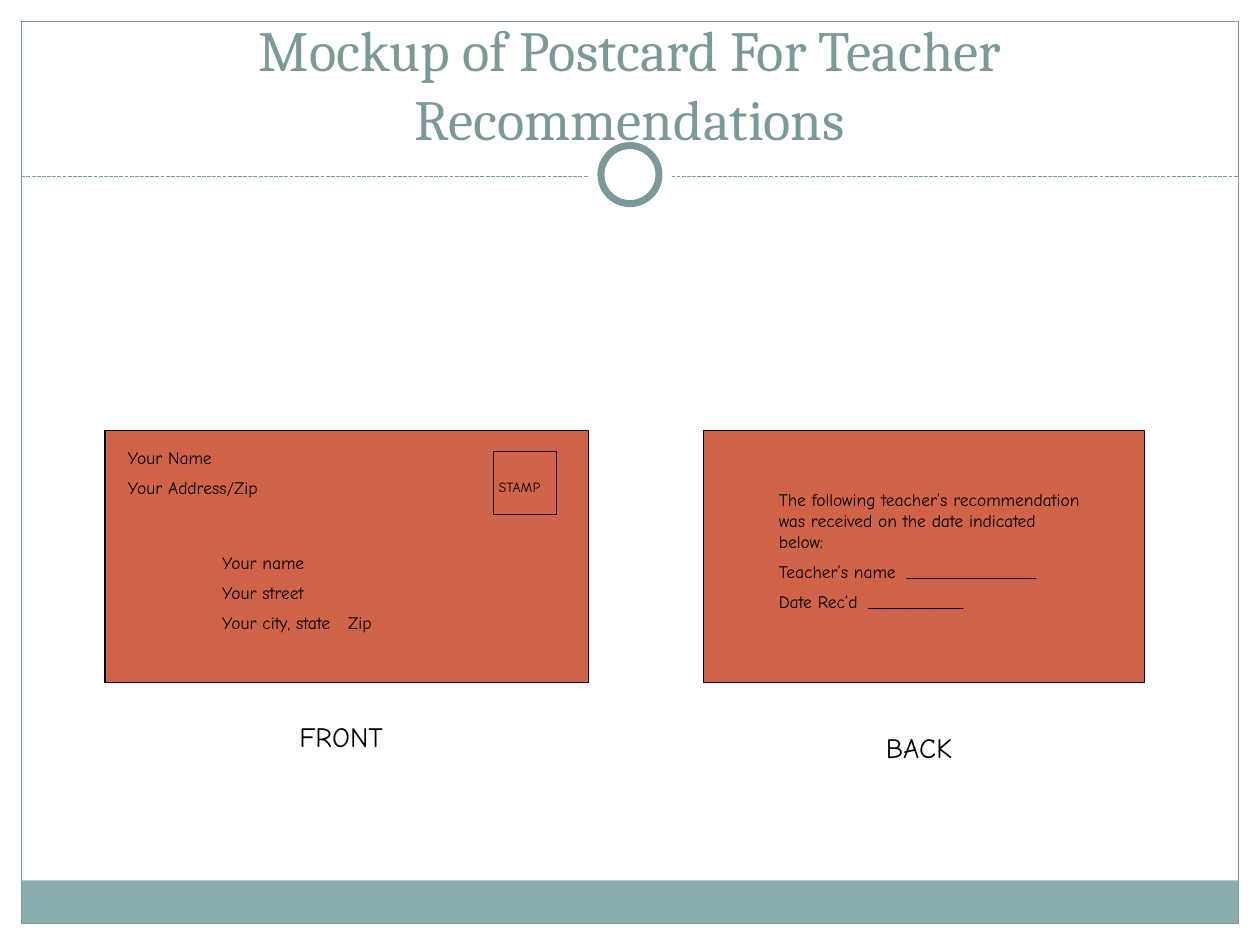
from lxml.etree import SubElement
from pptx import Presentation
from pptx.dml.color import RGBColor
from pptx.enum.dml import MSO_LINE_DASH_STYLE as Dash
from pptx.enum.shapes import MSO_CONNECTOR as Connector, MSO_SHAPE as Shape
from pptx.enum.text import MSO_ANCHOR as Anchor, MSO_AUTO_SIZE as AutoSize, PP_ALIGN as Align
from pptx.oxml.ns import qn
from pptx.util import Cm, Pt


class Theme:
    teal = RGBColor(0x7C, 0x99, 0x9A)
    band = RGBColor(0x8C, 0xAD, 0xAE)
    card = RGBColor(0xD1, 0x63, 0x49)
    white = RGBColor(0xFF, 0xFF, 0xFF)
    ink = RGBColor(0, 0, 0)
    title_font, body_font = "Cambria", "Comic Neue"
    title, caption, body, stamp = 32.4, 16, 10, 8
    hairline, ring = 0.75, 4


# Content: boxes are (left, top, width, height) in cm
TITLE = "Mockup of Postcard For Teacher Recommendations"
WIDTH, HEIGHT, MARGIN = 25.4, 19.05, 0.43
RULE_Y, BAND_TOP = 3.56, 17.75

CARDS = [
    (2.12, 8.68, 9.74, 5.08),   # front
    (9.95, 9.1, 1.27, 1.27),    # stamp
    (14.18, 8.68, 8.89, 5.08),  # back
]

# Texts: box, size, alignment, lines as (text, tab stop in cm or None)
TEXTS = [
    ((2.33, 8.89, 3.81, 1.31), Theme.body, Align.LEFT,
     [("Your Name", None), ("Your Address/Zip", None)]),
    ((4.23, 11.01, 5.93, 1.95), Theme.body, Align.LEFT,
     [("Your name", None), ("Your street", None), ("Your city, state\tZip", 2.54)]),
    ((9.31, 9.53, 2.33, 0.59), Theme.stamp, Align.CENTER, [("STAMP", None)]),
    ((4.02, 14.39, 5.72, 0.93), Theme.caption, Align.CENTER, [("FRONT", None)]),
    ((16.09, 14.61, 4.87, 0.93), Theme.caption, Align.CENTER, [("BACK", None)]),
    ((15.45, 9.74, 6.56, 2.79), Theme.body, Align.LEFT,
     [("The following teacher’s recommendation was received on the date indicated below:", None),
      ("Teacher’s name\t_______________", 2.58),
      ("Date Rec’d\t___________", 1.81)]),
]


def to_cm(box):
    return [Cm(value) for value in box]


def set_font(paragraph, name, size, color):
    paragraph.font.name = name
    paragraph.font.size = Pt(size)
    paragraph.font.color.rgb = color


def add_block(slide, kind, box, fill=None, line=None, weight=Theme.hairline):
    block = slide.shapes.add_shape(kind, *to_cm(box))
    block.shadow.inherit = False
    if fill is None:
        block.fill.background()
    else:
        block.fill.solid()
        block.fill.fore_color.rgb = fill
    if line is None:
        block.line.fill.background()
    else:
        block.line.color.rgb = line
        block.line.width = Pt(weight)


def add_circle(slide, size, line=None):
    left, top = (WIDTH - size) / 2, RULE_Y - 0.04 - size / 2
    add_block(slide, Shape.OVAL, (left, top, size, size), Theme.white, line, Theme.ring)


def add_frame(slide):
    inner = WIDTH - 2 * MARGIN
    bottom = HEIGHT - MARGIN
    add_block(slide, Shape.RECTANGLE, (MARGIN, BAND_TOP, inner, bottom - BAND_TOP), Theme.band)
    add_block(slide, Shape.RECTANGLE, (MARGIN, MARGIN, inner, bottom - MARGIN), line=Theme.teal)
    rule = slide.shapes.add_connector(
        Connector.STRAIGHT, *to_cm((MARGIN, RULE_Y, WIDTH - MARGIN, RULE_Y)))
    rule.line.color.rgb = Theme.teal
    rule.line.width = Pt(Theme.hairline)
    rule.line.dash_style = Dash.SQUARE_DOT
    SubElement(rule._element.spPr, qn("a:effectLst"))
    # The white disc interrupts the rule around the ring
    add_circle(slide, 1.7)
    add_circle(slide, 1.17, Theme.teal)


def add_title(slide):
    title = slide.shapes.title
    title.left, title.top, title.width, title.height = to_cm((0.85, 0, 23.7, 3.18))
    frame = title.text_frame
    frame.text = TITLE
    frame.word_wrap = True
    frame.auto_size = AutoSize.NONE
    frame.vertical_anchor = Anchor.BOTTOM
    frame.paragraphs[0].alignment = Align.CENTER
    set_font(frame.paragraphs[0], Theme.title_font, Theme.title, Theme.teal)
    # Keep the title in front of the frame
    slide.shapes._spTree.append(title._element)


def add_text(slide, box, size, alignment, lines):
    frame = slide.shapes.add_textbox(*to_cm(box)).text_frame
    frame.word_wrap = True
    for index, (text, tab_stop) in enumerate(lines):
        paragraph = frame.add_paragraph() if index else frame.paragraphs[0]
        paragraph.add_run().text = text
        paragraph.alignment = alignment
        if index:
            paragraph.space_before = Pt(size / 2)
        if tab_stop:
            tabs = SubElement(paragraph._p.get_or_add_pPr(), qn("a:tabLst"))
            SubElement(tabs, qn("a:tab"), pos=str(Cm(tab_stop)), algn="l")
        set_font(paragraph, Theme.body_font, size, Theme.ink)


def main():
    deck = Presentation()
    deck.slide_width, deck.slide_height = Cm(WIDTH), Cm(HEIGHT)
    slide = deck.slides.add_slide(deck.slide_layouts[5])
    add_frame(slide)
    add_title(slide)
    for box in CARDS:
        add_block(slide, Shape.RECTANGLE, box, Theme.card, Theme.ink)
    for text in TEXTS:
        add_text(slide, *text)
    deck.save("out.pptx")


if __name__ == "__main__":
    main()
